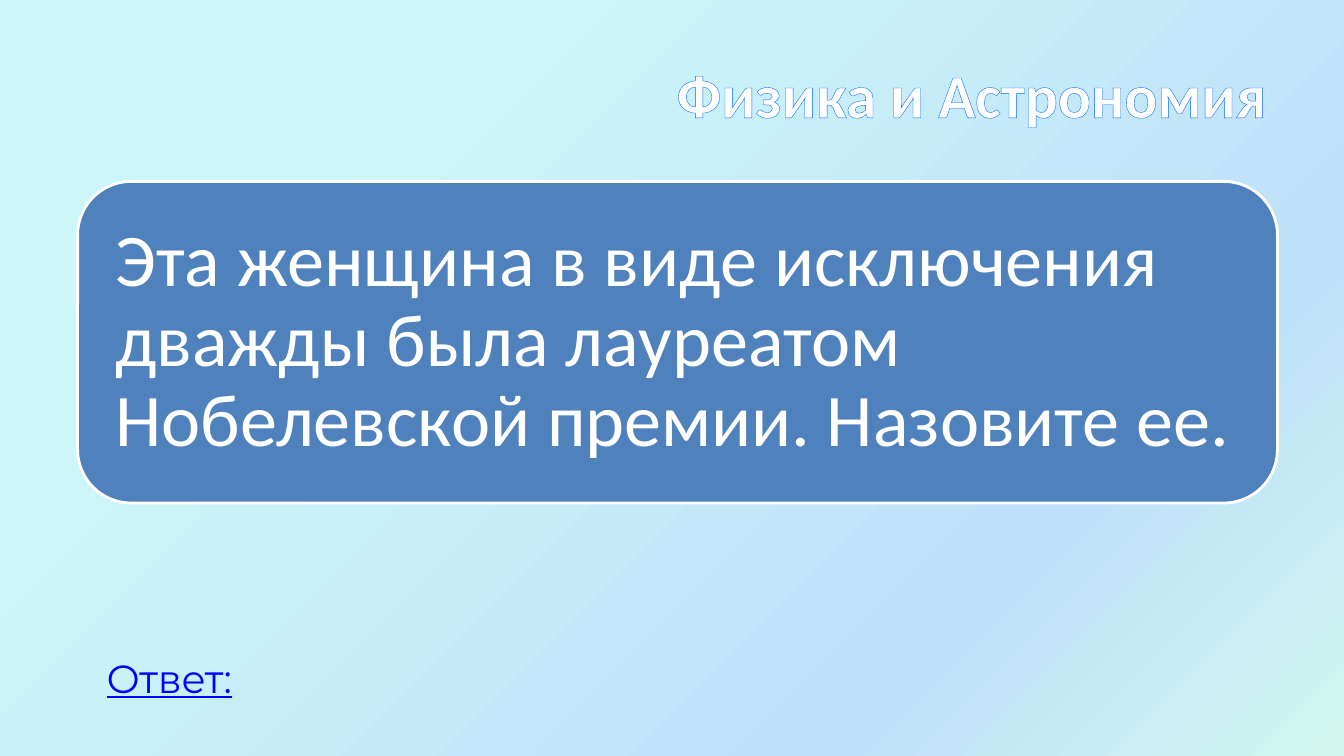
from copy import deepcopy

from lxml import etree
from pptx import Presentation
from pptx.dml.color import RGBColor
from pptx.enum.shapes import MSO_SHAPE
from pptx.enum.text import MSO_ANCHOR, PP_ALIGN
from pptx.oxml.ns import qn
from pptx.util import Inches, Pt

ROUNDED = MSO_SHAPE.ROUNDED_RECTANGLE
MIDDLE = MSO_ANCHOR.MIDDLE
LEFT, RIGHT = PP_ALIGN.LEFT, PP_ALIGN.RIGHT

# Content
TOPIC = "Физика и Астрономия"
QUESTION = ("Эта женщина в виде исключения дважды была лауреатом "
            "Нобелевской премии. Назовите ее.")
ANSWER = "Ответ:"

COLORS = {
    "white": "FFFFFF",
    "card": "4F81BD",
    "outline": "0066FF",
    "answer": "0000FF",
}
BACKGROUND_STOPS = [(0.25, "CCF6F8"), (0.75, "BFE1F9"), (1, "D1F7EF")]


def rgb(name):
    return RGBColor.from_string(COLORS[name])


def write(frame, text, font, size, color, align=LEFT):
    """Fill a frame with one paragraph and return its run."""
    frame.text = text
    paragraph = frame.paragraphs[0]
    paragraph.alignment = align
    run = paragraph.runs[0]
    run.font.name = font
    run.font.size = Pt(size)
    run.font.color.rgb = rgb(color)
    return run


prs = Presentation()
prs.slide_width, prs.slide_height = Inches(13.33), Inches(7.5)
slide = prs.slides.add_slide(prs.slide_layouts[5])

# Diagonal pastel background
background = slide.background.fill
background.gradient()
background.gradient_angle = 315
stop_list = slide.element.find(".//" + qn("a:gsLst"))
stop_list.append(deepcopy(stop_list[-1]))
for stop, (position, color) in zip(background.gradient_stops, BACKGROUND_STOPS):
    stop.position = position
    stop.color.rgb = RGBColor.from_string(color)

# Topic title with outlined letters
title = slide.shapes.title
title.left, title.top = Inches(0.67), Inches(0.3)
title.width, title.height = Inches(12), Inches(1.25)
title.text_frame.vertical_anchor = MIDDLE
topic = write(title.text_frame, TOPIC, "Calibri", 44, "white", RIGHT)
topic.font.bold = True
outline = etree.Element(qn("a:ln"), w=str(Pt(1.45)))
outline_fill = etree.SubElement(outline, qn("a:solidFill"))
etree.SubElement(outline_fill, qn("a:srgbClr"), val=COLORS["outline"])
topic.font.fill  # the run properties exist from here on
topic._r.get_or_add_rPr().insert(0, outline)

# Question card
card = slide.shapes.add_shape(
    ROUNDED, Inches(0.77), Inches(1.8), Inches(11.9), Inches(3.19))
card.shadow.inherit = False
card.fill.solid()
card.fill.fore_color.rgb = rgb("card")
card.line.color.rgb = rgb("white")
card.line.width = Pt(2)
question = card.text_frame
question.word_wrap = True
question.vertical_anchor = MIDDLE
question.margin_left = question.margin_right = Inches(0.22)
question.margin_top = question.margin_bottom = Inches(0.22)
write(question, QUESTION, "Calibri", 53, "white")
question.paragraphs[0].line_spacing = 0.9

# Answer label
answer = slide.shapes.add_textbox(
    Inches(0.96), Inches(6.44), Inches(1.56), Inches(0.57))
answer.text_frame.word_wrap = False
write(answer.text_frame, ANSWER, "Montserrat", 28, "answer").font.underline = True

prs.save("out.pptx")
